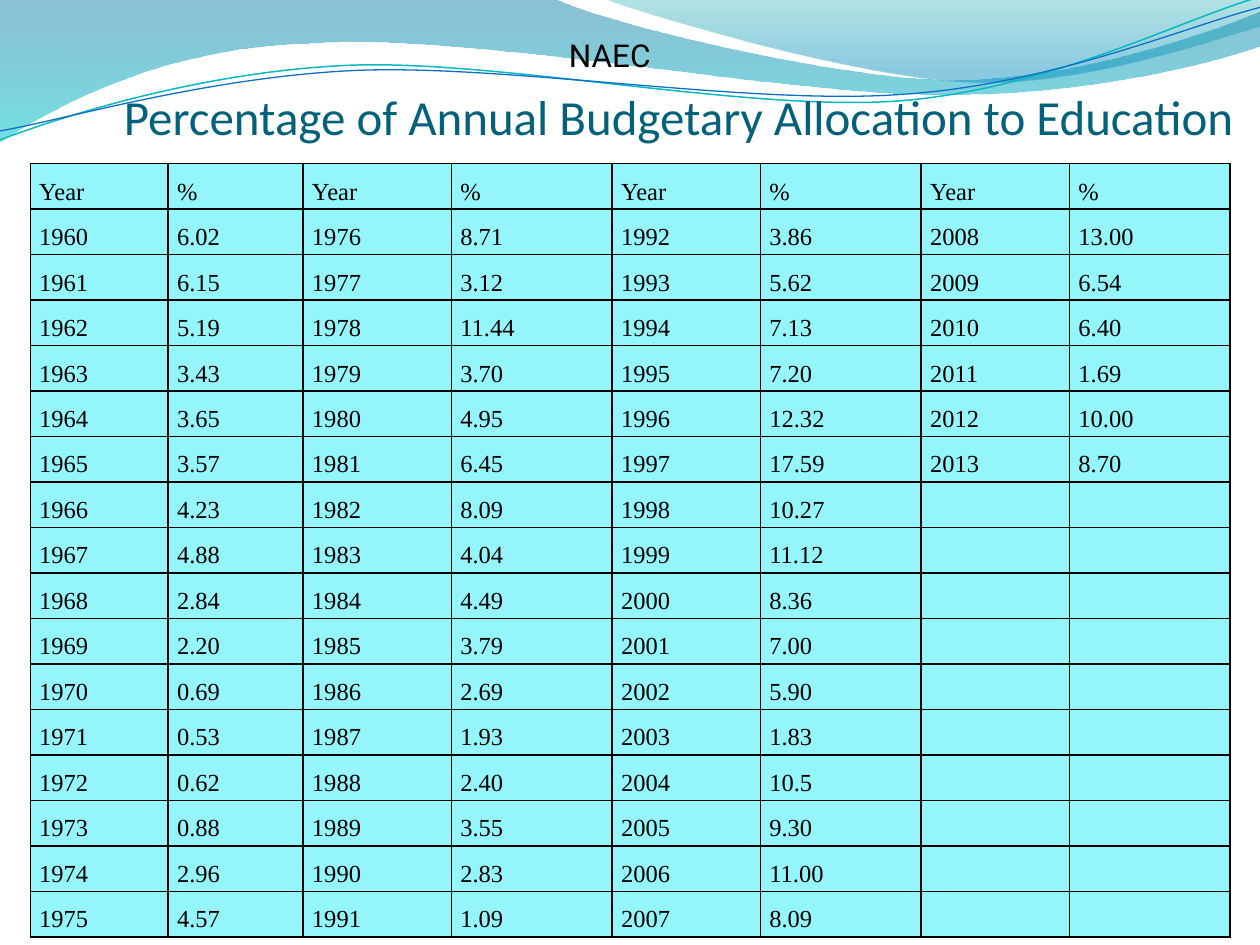
import pptx
import pptx.dml.color
import pptx.enum.text
import pptx.oxml
import pptx.oxml.ns
import pptx.util
from pptx.util import Cm

COLORS = {
    "band_top": "0074A1", "band_bottom": "00C6CF",
    "swoosh_top": "00A1A9", "swoosh_bottom": "008BBF",
    "teal_line": "0AB8BF", "blue_line": "0F6FC6",
    "title": "04617B", "text": "000000", "cell": "94F5FA", "border": "000000",
}

# Outlines in cm: a pair is a straight step, six numbers are a Bézier curve.
BAND = [
    (0, 0), (11.18, -0.03),
    (12.09, 0.43, 16.87, 1.6, 19.25, 1.6), (21.67, 1.6, 24.33, 0.66, 25.4, 0.23),
    (25.43, 0.91), (24.97, 1.12, 22.1, 1.93, 18.95, 1.91),
    (15.8, 1.91, 9.7, 0.71, 6.53, 0.86), (3.28, 0.91, 1.17, 2.11, -0.03, 2.87),
    (0, 0),
]
SWOOSH = [
    (12.17, -0.03), (12.93, 0.28, 17.32, 1.57, 19.53, 1.65),
    (21.74, 1.75, 24.41, 0.81, 25.4, 0.53), (25.4, 0), (12.17, -0.03),
]
TEAL_LINE = [
    (-0.05, 2.22), (1.19, 1.82, 4.02, 1.04, 7.05, 1.05),
    (10.05, 1.07, 15.02, 2.37, 18.08, 2.29), (21.13, 2.2, 23.87, 0.91, 25.41, 0.55),
]
BLUE_LINE = [
    (-0.04, 2.04), (1.16, 1.9, 4.18, 1.15, 7.2, 1.16),
    (10.25, 1.18, 15.13, 2.25, 18.18, 2.16), (21.21, 2.1, 23.93, 1.06, 25.45, 0.75),
]
LINE_ROTATION = 357.3

FIRST_YEAR = 1960
YEARS_PER_BLOCK = 16
PERCENTAGES = """
    6.02 6.15 5.19 3.43 3.65 3.57 4.23 4.88 2.84 2.20 0.69 0.53 0.62 0.88 2.96 4.57
    8.71 3.12 11.44 3.70 4.95 6.45 8.09 4.04 4.49 3.79 2.69 1.93 2.40 3.55 2.83 1.09
    3.86 5.62 7.13 7.20 12.32 17.59 10.27 11.12 8.36 7.00 5.90 1.83 10.5 9.30 11.00 8.09
    13.00 6.54 6.40 1.69 10.00 8.70
""".split()
COLUMN_WIDTHS = [2.78, 2.72] + [2.99, 3.24] * 3


def rgb(name):
    return pptx.dml.color.RGBColor.from_string(COLORS[name])


def write(tf, text, *, size, font, color="text", align=None, spacing=None):
    p = tf.paragraphs[0]
    p.alignment = align
    p.line_spacing = spacing
    r = p.add_run()
    r.text = text
    r.font.size = pptx.util.Pt(size)
    r.font.name = font
    r.font.color.rgb = rgb(color)


def add_outline(s, outline, close):
    """Draw every point as a straight step, then join each curve's three steps into one."""
    points = [(Cm(x), Cm(y)) for step in outline for x, y in zip(step[::2], step[1::2])]
    builder = s.shapes.build_freeform(*points[0])
    builder.add_line_segments(points[1:], close=close)
    sp = builder.convert_to_shape()
    sp.shadow.inherit = False
    steps = iter(list(sp._element.iter(pptx.oxml.ns.qn("a:lnTo"))))
    for step in outline[1:]:
        line = next(steps)
        if len(step) == 6:
            curve = pptx.oxml.parse_xml(f'<a:cubicBezTo {pptx.oxml.ns.nsdecls("a")}/>')
            line.addprevious(curve)
            for part in (line, next(steps), next(steps)):
                curve.append(part[0])
                part.getparent().remove(part)
    return sp


def add_wave(s, outline, stops):
    """Closed wave; each stop is (position, color, opacity in percent), top to bottom."""
    sp = add_outline(s, outline, close=True)
    sp.line.fill.background()
    sp.fill.gradient()
    sp.fill.gradient_angle = 270
    for stop, (position, color, _) in zip(sp.fill.gradient_stops, stops):
        stop.position = position
        stop.color.rgb = rgb(color)
    for clr, (_, _, opacity) in zip(sp._element.spPr.iter(pptx.oxml.ns.qn("a:srgbClr")), stops):
        clr.append(pptx.oxml.parse_xml(
            f'<a:alpha {pptx.oxml.ns.nsdecls("a")} val="{opacity * 1000}"/>'))


def add_curve(s, outline, color, width):
    sp = add_outline(s, outline, close=False)
    sp.rotation = LINE_ROTATION
    sp.fill.background()
    sp.line.color.rgb = rgb(color)
    sp.line.width = pptx.util.Pt(width)


def add_text(s, text, left, top, width, height, *, wrap=True, anchor=None, insets=None, **fmt):
    tf = s.shapes.add_textbox(Cm(left), Cm(top), Cm(width), Cm(height)).text_frame
    tf.word_wrap = wrap
    tf.vertical_anchor = anchor
    if insets:
        tf.margin_left, tf.margin_top, tf.margin_right, tf.margin_bottom = map(Cm, insets)
    write(tf, text, **fmt)


def set_borders(cell, color, width):
    tc_pr = cell._tc.get_or_add_tcPr()
    for i, side in enumerate(("lnL", "lnR", "lnT", "lnB")):
        tc_pr.insert(i, pptx.oxml.parse_xml(
            f'<a:{side} {pptx.oxml.ns.nsdecls("a")} w="{pptx.util.Pt(width)}">'
            f'<a:solidFill><a:srgbClr val="{COLORS[color]}"/></a:solidFill></a:{side}>'))


def budget_rows():
    blocks = -(-len(PERCENTAGES) // YEARS_PER_BLOCK)
    rows = [["Year", "%"] * blocks]
    for i in range(YEARS_PER_BLOCK):
        row = []
        for n in range(i, blocks * YEARS_PER_BLOCK, YEARS_PER_BLOCK):
            known = n < len(PERCENTAGES)
            row += [str(FIRST_YEAR + n), PERCENTAGES[n]] if known else ["", ""]
        rows.append(row)
    return rows


def add_budget_table(s, left, top, height):
    rows = budget_rows()
    table = s.shapes.add_table(len(rows), len(COLUMN_WIDTHS), Cm(left), Cm(top),
                               Cm(sum(COLUMN_WIDTHS)), Cm(height)).table
    table.first_row = table.horz_banding = False
    for column, width in zip(table.columns, COLUMN_WIDTHS):
        column.width = Cm(width)
    for i, row in enumerate(rows):
        for j, text in enumerate(row):
            cell = table.cell(i, j)
            cell.margin_left = cell.margin_right = Cm(0.18)
            cell.margin_top, cell.margin_bottom = Cm(0.02), 0
            set_borders(cell, "border", 1)
            cell.fill.solid()
            cell.fill.fore_color.rgb = rgb("cell")
            if text:
                write(cell.text_frame, text, size=14, font="Times New Roman",
                      align=pptx.enum.text.PP_ALIGN.JUSTIFY, spacing=1.5)


def main():
    prs = pptx.Presentation()
    prs.slide_width, prs.slide_height = Cm(25.4), Cm(19.05)
    s = prs.slides.add_slide(prs.slide_layouts[6])
    add_wave(s, BAND, [(0, "band_top", 45), (1, "band_bottom", 55)])
    add_wave(s, SWOOSH, [(0, "swoosh_top", 30), (0.8, "swoosh_bottom", 45)])
    add_curve(s, TEAL_LINE, "teal_line", 0.85)
    add_curve(s, BLUE_LINE, "blue_line", 0.75)
    add_text(s, "Percentage of Annual Budgetary Allocation to Education",
             2.5, 2.13, 22.9, 0.81, anchor=pptx.enum.text.MSO_ANCHOR.BOTTOM,
             insets=(0, 0.13, 0, 0), size=28, font="Calibri", color="title")
    add_budget_table(s, 0.61, 3.3, 15.59)
    add_text(s, "NAEC", 11.22, 0.6, 2.18, 1.02, wrap=False, size=18, font="Roboto")
    prs.save("out.pptx")


if __name__ == "__main__":
    main()
